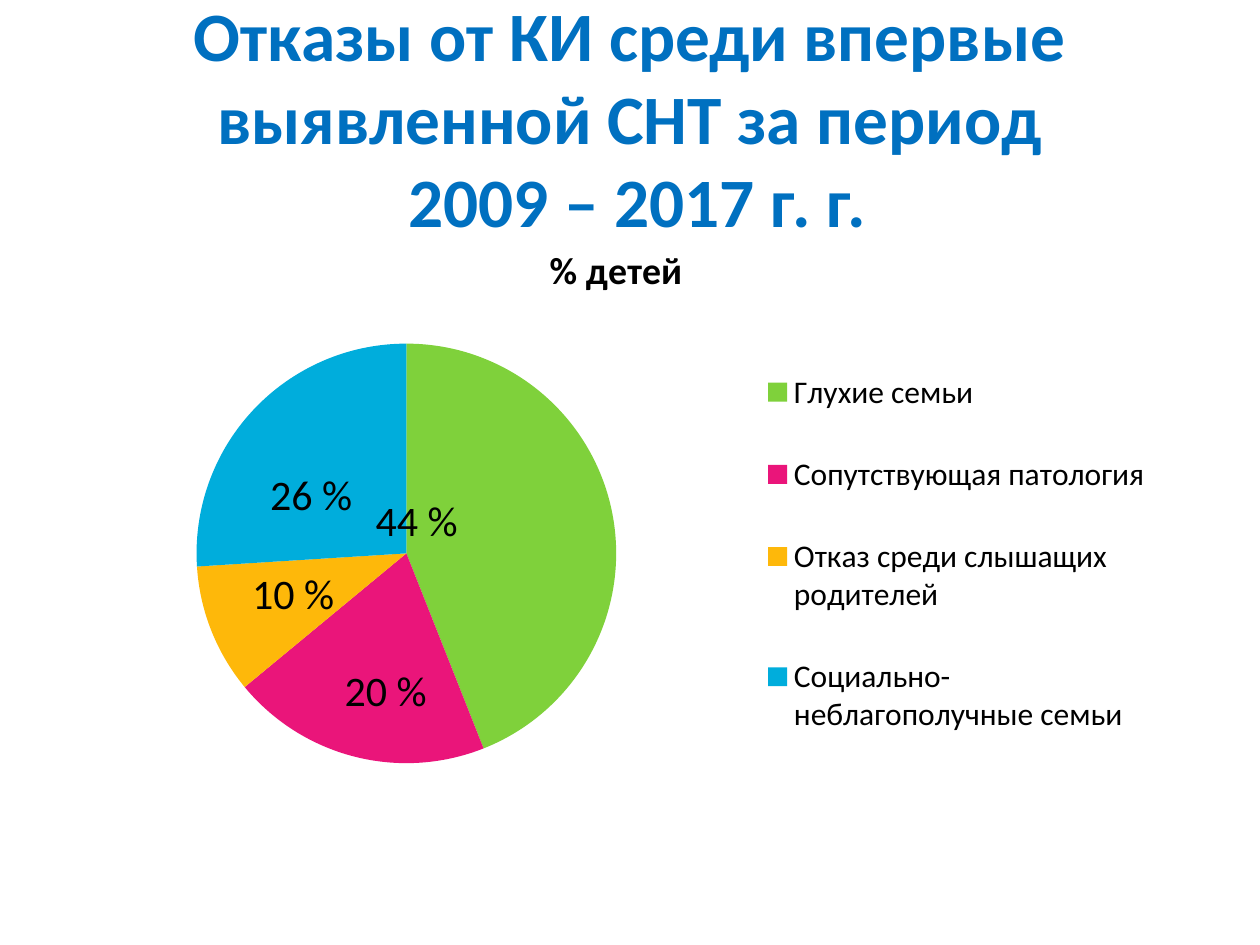
from lxml.etree import SubElement
from pptx import Presentation
from pptx.chart.data import CategoryChartData
from pptx.dml.color import RGBColor
from pptx.enum.chart import XL_CHART_TYPE as ChartType
from pptx.enum.chart import XL_LABEL_POSITION as LabelPosition
from pptx.enum.chart import XL_LEGEND_POSITION as LegendPosition
from pptx.enum.text import MSO_ANCHOR, PP_ALIGN
from pptx.oxml import parse_xml
from pptx.oxml.ns import nsdecls, qn
from pptx.util import Inches, Pt

COLORS = {
    "heading": "0070C0",
    "text": "000000",
    "green": "7FD13B",
    "pink": "EA157A",
    "amber": "FEB80A",
    "blue": "00ADDC",
}
FONT = "Calibri"

# Reason, share in %, colour, label shift as a fraction of the chart
REASONS = [
    ("Глухие семьи", 44, "green", (-0.13, -0.03)),
    ("Сопутствующая патология", 20, "pink", (-0.01, -0.05)),
    ("Отказ среди слышащих родителей", 10, "amber", (0.03, -0.01)),
    ("Социально-неблагополучные семьи", 26, "blue", (0.01, 0.09)),
]


def style_font(font, size, color, bold=False):
    font.name = FONT
    font.size = Pt(size)
    font.bold = bold
    font.color.rgb = RGBColor.from_string(COLORS[color])


def manual_layout(**settings):
    layout = parse_xml(f"<c:layout {nsdecls('c')}/>")
    manual = SubElement(layout, qn("c:manualLayout"))
    for tag, value in settings.items():
        SubElement(manual, qn(f"c:{tag}")).set("val", str(value))
    return layout


prs = Presentation()
prs.slide_width, prs.slide_height = Inches(10), Inches(7.5)
slide = prs.slides.add_slide(prs.slide_layouts[6])

# Heading
heading = slide.shapes.add_textbox(Inches(0.5), Inches(0.3), Inches(9), Inches(1.25)).text_frame
heading.word_wrap = True
heading.vertical_anchor = MSO_ANCHOR.MIDDLE
heading.text = "Отказы от КИ среди впервые выявленной СНТ за период\v 2009 – 2017 г. г."
heading.paragraphs[0].alignment = PP_ALIGN.CENTER
style_font(heading.paragraphs[0].font, 39.6, "heading", bold=True)

# Pie of refusal reasons
shares = CategoryChartData(number_format='0" %"')
shares.categories = [reason for reason, *_ in REASONS]
shares.add_series("% детей", [share for _, share, *_ in REASONS])
chart = slide.shapes.add_chart(
    ChartType.PIE, Inches(0.39), Inches(1.72), Inches(9), Inches(4.95), shares
).chart
style_font(chart.font, 18, "text")

# Chart title
chart.has_title = True
chart_title = chart.chart_title.text_frame
chart_title.text = "% детей"
style_font(chart_title.paragraphs[0].font, 21.6, "text", bold=True)
chart.chart_title.include_in_layout = False

# Legend
chart.has_legend = True
legend = chart.legend
legend.position = LegendPosition.RIGHT
legend.include_in_layout = False
style_font(legend.font, 18, "text")

# Slices and their labels
pie = chart.plots[0]
pie.vary_by_categories = True
pie.has_data_labels = True
labels = pie.data_labels
labels.show_value = True
labels.number_format = '0" %"'
labels.number_format_is_linked = False
labels.position = LabelPosition.INSIDE_END
style_font(labels.font, 24, "text")

for index, (_, _, color, (dx, dy)) in enumerate(REASONS):
    point = pie.series[0].points[index]
    point.format.fill.solid()
    point.format.fill.fore_color.rgb = RGBColor.from_string(COLORS[color])
    label = point.data_label
    style_font(label.font, 24, "text")
    label.position = LabelPosition.INSIDE_END
    label_xml = pie.series[0].data_labels._element.findall(qn("c:dLbl"))[index]
    label_xml.find(qn("c:idx")).addnext(manual_layout(x=dx, y=dy))

# The series' own labels follow the plot's settings
series_labels = pie.series[0].data_labels
series_labels.show_value = True
series_labels.number_format = '0" %"'
series_labels.number_format_is_linked = False
series_labels.position = LabelPosition.INSIDE_END

# Places of the pie and the legend inside the chart
plot_area = chart._chartSpace.chart.plotArea
for old_layout in plot_area.findall(qn("c:layout")):
    plot_area.remove(old_layout)
plot_area.insert(0, manual_layout(
    layoutTarget="inner", xMode="edge", yMode="edge", x=0.13, y=0.2, w=0.37, h=0.68))
legend_xml = legend._element
for old_layout in legend_xml.findall(qn("c:layout")):
    legend_xml.remove(old_layout)
legend_xml.find(qn("c:legendPos")).addnext(manual_layout(
    xMode="edge", yMode="edge", x=0.62, y=0.18, w=0.36, h=0.72))

prs.save("out.pptx")
